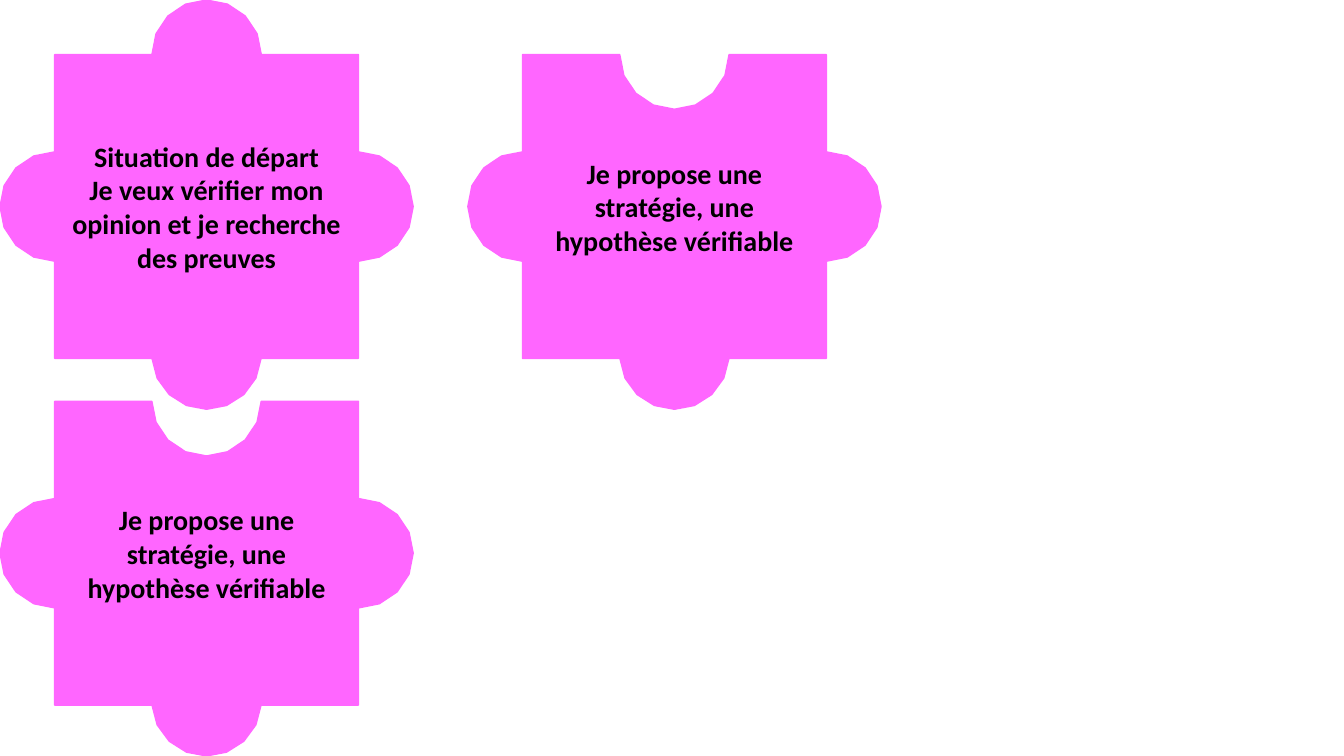
import math
from dataclasses import dataclass

import pptx
import pptx.dml.color
import pptx.enum.text
import pptx.util


@dataclass(frozen=True)
class Theme:
    piece: str = "FF66FF"
    ink: str = "000000"
    font: str = "Calibri"
    text_size: float = 20
    outline: float = 1


# Lengths in grid units: one unit is a hundredth of the slide's height.
HALF = 20.09
KNOB = 7.23
CENTRE = HALF + KNOB
BOTTOM_INSET = 0.5
COLUMN_PITCH = 61.87
ROW_PITCH = 100 - 2 * CENTRE + BOTTOM_INSET
RIGHT, BOTTOM, LEFT, TOP = 0, 90, 180, 270
ARC_STEPS = 8


def polar(centre, radius, degrees):
    angle = math.radians(degrees)
    return (centre[0] + radius * math.cos(angle),
            centre[1] + radius * math.sin(angle))


def knob_arc(centre, side, outer):
    """Points of a side's circle lying outside or inside the square."""
    inset = BOTTOM_INSET if side == BOTTOM else 0
    reach = 90 - math.degrees(math.asin(inset / KNOB))
    start, end = (-reach, reach) if outer else (reach, 360 - reach)
    hub = polar(centre, HALF - inset, side)
    step = (end - start) / ARC_STEPS
    return [polar(hub, KNOB, side + start + i * step)
            for i in range(ARC_STEPS + 1)]


def body_outline(centre):
    """The square with a round bite taken from each side."""
    points = []
    for side in (TOP, RIGHT, BOTTOM, LEFT):
        points.append(polar(centre, HALF * math.sqrt(2), side - 45))
        points += reversed(knob_arc(centre, side, outer=False))
    return points


class PuzzleSlide:
    def __init__(self, prs, theme):
        self.theme = theme
        self.unit = prs.slide_height / 100
        self.s = prs.slides.add_slide(prs.slide_layouts[6])

    def outline(self, shapes, points):
        emu = [(round(x * self.unit), round(y * self.unit)) for x, y in points]
        builder = shapes.build_freeform(*emu[0])
        builder.add_line_segments(emu[1:], close=True)
        sp = builder.convert_to_shape()
        colour = pptx.dml.color.RGBColor.from_string(self.theme.piece)
        sp.shadow.inherit = False
        sp.fill.solid()
        sp.fill.fore_color.rgb = colour
        sp.line.color.rgb = colour
        sp.line.width = pptx.util.Pt(self.theme.outline)
        return sp

    def label(self, sp, text):
        tf = sp.text_frame
        tf.text = text
        tf.word_wrap = True
        tf.vertical_anchor = pptx.enum.text.MSO_ANCHOR.MIDDLE
        for p in tf.paragraphs:
            p.alignment = pptx.enum.text.PP_ALIGN.CENTER
            for r in p.runs:
                r.font.name = self.theme.font
                r.font.size = pptx.util.Pt(self.theme.text_size)
                r.font.bold = True
                r.font.color.rgb = pptx.dml.color.RGBColor.from_string(self.theme.ink)

    def piece(self, column, row, text, top_knob=False):
        centre = (CENTRE + column * COLUMN_PITCH, CENTRE + row * ROW_PITCH)
        sides = [LEFT, RIGHT, BOTTOM]
        if top_knob:
            sides.insert(0, TOP)
        shapes = self.s.shapes.add_group_shape().shapes
        for side in sides:
            self.outline(shapes, knob_arc(centre, side, outer=False))
        self.label(self.outline(shapes, body_outline(centre)), text)
        for side in sides:
            self.outline(shapes, knob_arc(centre, side, outer=True))


def main():
    prs = pptx.Presentation()
    prs.slide_width = pptx.util.Inches(13.33)
    prs.slide_height = pptx.util.Inches(7.5)
    puzzle = PuzzleSlide(prs, Theme())
    strategy = "Je propose une stratégie, une hypothèse vérifiable"
    puzzle.piece(0, 0, "Situation de départ\nJe veux vérifier mon opinion "
                 "et je recherche des preuves", top_knob=True)
    puzzle.piece(0, 1, strategy)
    puzzle.piece(1, 0, strategy)
    prs.save("out.pptx")


if __name__ == "__main__":
    main()
